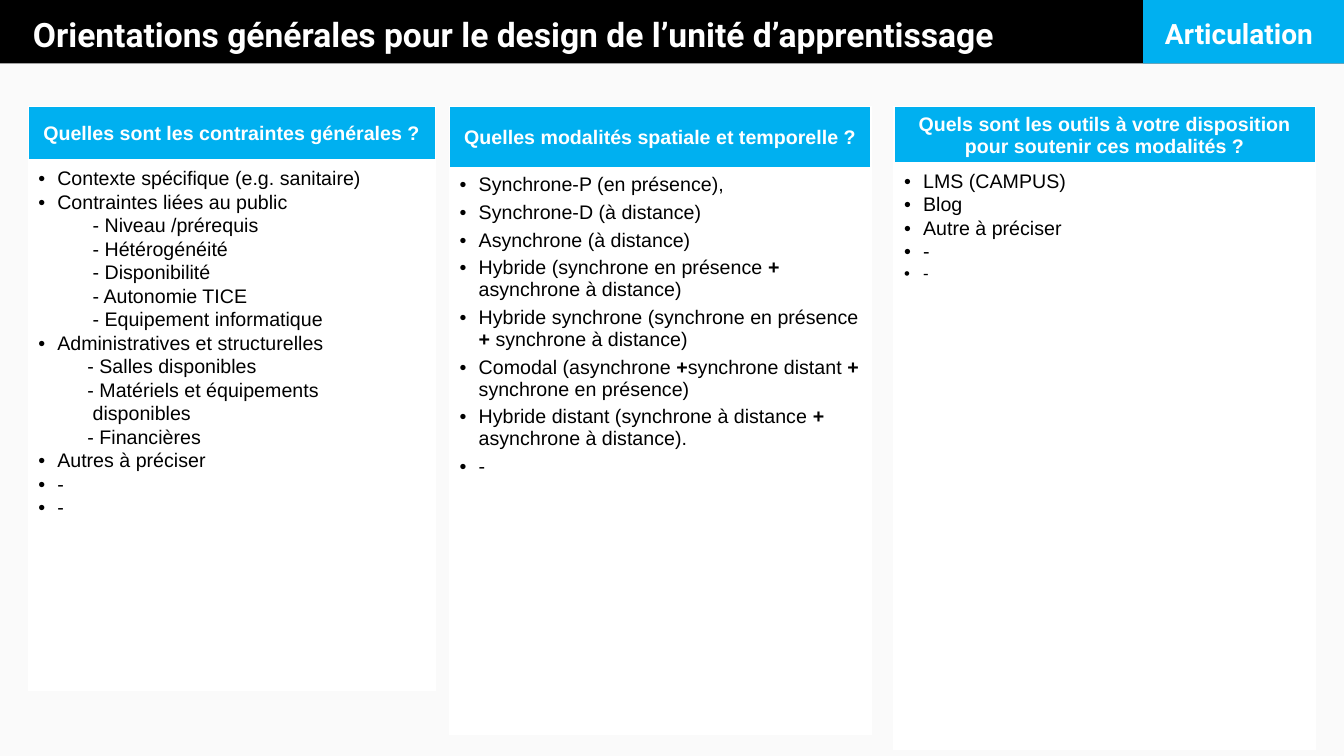
"""Build the slide on general orientations for designing a learning unit."""
from dataclasses import dataclass
from itertools import groupby

from lxml import etree
from pptx import Presentation
from pptx.dml.color import RGBColor
from pptx.enum.shapes import MSO_SHAPE
from pptx.enum.text import MSO_ANCHOR, PP_ALIGN
from pptx.oxml.ns import qn
from pptx.util import Cm, Pt

RECTANGLE = MSO_SHAPE.RECTANGLE
MIDDLE = MSO_ANCHOR.MIDDLE
CENTER = PP_ALIGN.CENTER

BLACK, WHITE, BLUE, PALE = "000000", "FFFFFF", "00B0F0", "FAFAFA"
COLUMN_TOP = 2.69
BULLET_INDENT = 0.48
DASH_INDENT, DEEP_INDENT = 1.24, 1.37


@dataclass
class Item:
    """One line of a column, bulleted unless it has an indent."""
    text: str
    indent: float = 0
    size: int = 14


@dataclass
class Column:
    """One question with its list of answers."""
    left: float
    width: float
    header_height: float
    body_height: float
    question: str
    items: list[Item]
    line_spacing: float = 1.07
    space_after: int = 0


@dataclass
class Banner:
    """One coloured block of the top band and its label."""
    left: float
    width: float
    color: str
    label: str
    label_left: float
    label_top: float
    label_width: float
    label_height: float
    size: int


BANNERS = [
    Banner(0, 33.87, BLACK, "Orientations générales pour le design de l’unité d’apprentissage",
           0.58, 0.23, 26.92, 1.27, 24),
    Banner(28.81, 5.06, BLUE, "Articulation", 29.11, 0.3, 4.47, 1.12, 20),
]

COLUMNS = [
    Column(0.71, 10.26, 1.37, 13.34, "Quelles sont les contraintes générales ?", [
        Item("Contexte spécifique (e.g. sanitaire)"),
        Item("Contraintes liées au public"),
        Item("- Niveau /prérequis", DEEP_INDENT),
        Item("- Hétérogénéité", DEEP_INDENT),
        Item("- Disponibilité", DEEP_INDENT),
        Item("- Autonomie TICE", DEEP_INDENT),
        Item("- Equipement informatique", DEEP_INDENT),
        Item("Administratives et structurelles"),
        Item("- Salles disponibles", DASH_INDENT),
        Item("- Matériels et équipements", DASH_INDENT),
        Item("disponibles", DEEP_INDENT),
        Item("- Financières", DASH_INDENT),
        Item("Autres à préciser"),
        Item("-"),
        Item("-"),
    ]),
    Column(11.33, 10.62, 1.57, 14.24, "Quelles modalités spatiale et temporelle ?", [
        Item("Synchrone-P (en présence),"),
        Item("Synchrone-D (à distance)"),
        Item("Asynchrone (à distance)"),
        Item("Hybride (synchrone en présence + asynchrone à distance)"),
        Item("Hybride synchrone (synchrone en présence + synchrone à distance)"),
        Item("Comodal (asynchrone +synchrone distant + synchrone en présence)"),
        Item("Hybride distant (synchrone à distance + asynchrone à distance)."),
        Item("-"),
    ], line_spacing=1.0, space_after=4),
    Column(22.53, 10.62, 1.4, 14.75,
           "Quels sont les outils à votre disposition pour soutenir ces modalités ?", [
               Item("LMS (CAMPUS)"),
               Item("Blog"),
               Item("Autre à préciser"),
               Item("-"),
               Item("-", size=12),
           ]),
]


def rgb(color: str) -> RGBColor:
    """Turn a hex string into a colour."""
    return RGBColor.from_string(color)


def add_run(paragraph, text: str, size: int, font: str, color: str, bold: bool) -> None:
    """Append one formatted run."""
    run = paragraph.add_run()
    run.text = text
    run.font.size = Pt(size)
    run.font.name = font
    run.font.bold = bold
    run.font.color.rgb = rgb(color)


def add_banner(slide, banner: Banner) -> None:
    """Draw a block of the top band with its label."""
    block = slide.shapes.add_shape(RECTANGLE, Cm(banner.left), Cm(0), Cm(banner.width), Cm(1.6))
    block.shadow.inherit = False
    block.fill.solid()
    block.fill.fore_color.rgb = rgb(banner.color)
    block.line.fill.background()
    label = slide.shapes.add_textbox(Cm(banner.label_left), Cm(banner.label_top),
                                     Cm(banner.label_width), Cm(banner.label_height))
    label.text_frame.word_wrap = True
    add_run(label.text_frame.paragraphs[0], banner.label, banner.size, "Roboto", WHITE, True)


def style_cell(cell, color: str, bottom_width: int) -> None:
    """Fill a cell and give it white borders."""
    cell.fill.solid()
    cell.fill.fore_color.rgb = rgb(color)
    properties = cell._tc.get_or_add_tcPr()
    for position, side in enumerate(("lnL", "lnR", "lnT", "lnB")):
        border = etree.Element(qn(f"a:{side}"), w=str(Pt(bottom_width if side == "lnB" else 1)))
        fill = etree.SubElement(border, qn("a:solidFill"))
        etree.SubElement(fill, qn("a:srgbClr"), val=WHITE)
        properties.insert(position, border)


def indent_paragraph(paragraph, indent: float) -> None:
    """Indent a plain line, or hang a line on a black bullet."""
    properties = paragraph._p.get_or_add_pPr()
    properties.set("marL", str(Cm(indent or BULLET_INDENT)))
    if indent:
        return
    properties.set("indent", str(-Cm(BULLET_INDENT)))
    bullet_color = etree.SubElement(properties, qn("a:buClr"))
    etree.SubElement(bullet_color, qn("a:srgbClr"), val=BLACK)
    etree.SubElement(properties, qn("a:buFont"), typeface="Arial")
    etree.SubElement(properties, qn("a:buChar"), char="•")


def add_column(slide, column: Column) -> None:
    """Draw a question and its answers as a two-row table."""
    table = slide.shapes.add_table(2, 1, Cm(column.left), Cm(COLUMN_TOP), Cm(column.width),
                                   Cm(column.header_height + column.body_height)).table
    table.horz_banding = False
    table.rows[0].height = Cm(column.header_height)
    table.rows[1].height = Cm(column.body_height)

    header, body = table.cell(0, 0), table.cell(1, 0)
    style_cell(header, BLUE, 3)
    style_cell(body, WHITE, 1)
    header.vertical_anchor = MIDDLE
    question = header.text_frame.paragraphs[0]
    question.alignment = CENTER
    add_run(question, column.question, 14, "Arial", WHITE, True)

    answers = body.text_frame
    for index, item in enumerate(column.items):
        answer = answers.add_paragraph() if index else answers.paragraphs[0]
        answer.line_spacing = column.line_spacing
        answer.space_after = Pt(column.space_after)
        indent_paragraph(answer, item.indent)
        for is_plus, letters in groupby(item.text, lambda letter: letter == "+"):
            add_run(answer, "".join(letters), item.size, "Arial", BLACK, is_plus)


def main() -> None:
    """Build and save the slide."""
    presentation = Presentation()
    presentation.slide_width, presentation.slide_height = Cm(33.87), Cm(19.05)
    slide = presentation.slides.add_slide(presentation.slide_layouts[6])
    slide.background.fill.solid()
    slide.background.fill.fore_color.rgb = rgb(PALE)
    for banner in BANNERS:
        add_banner(slide, banner)
    for column in COLUMNS:
        add_column(slide, column)
    presentation.save("out.pptx")


if __name__ == "__main__":
    main()
